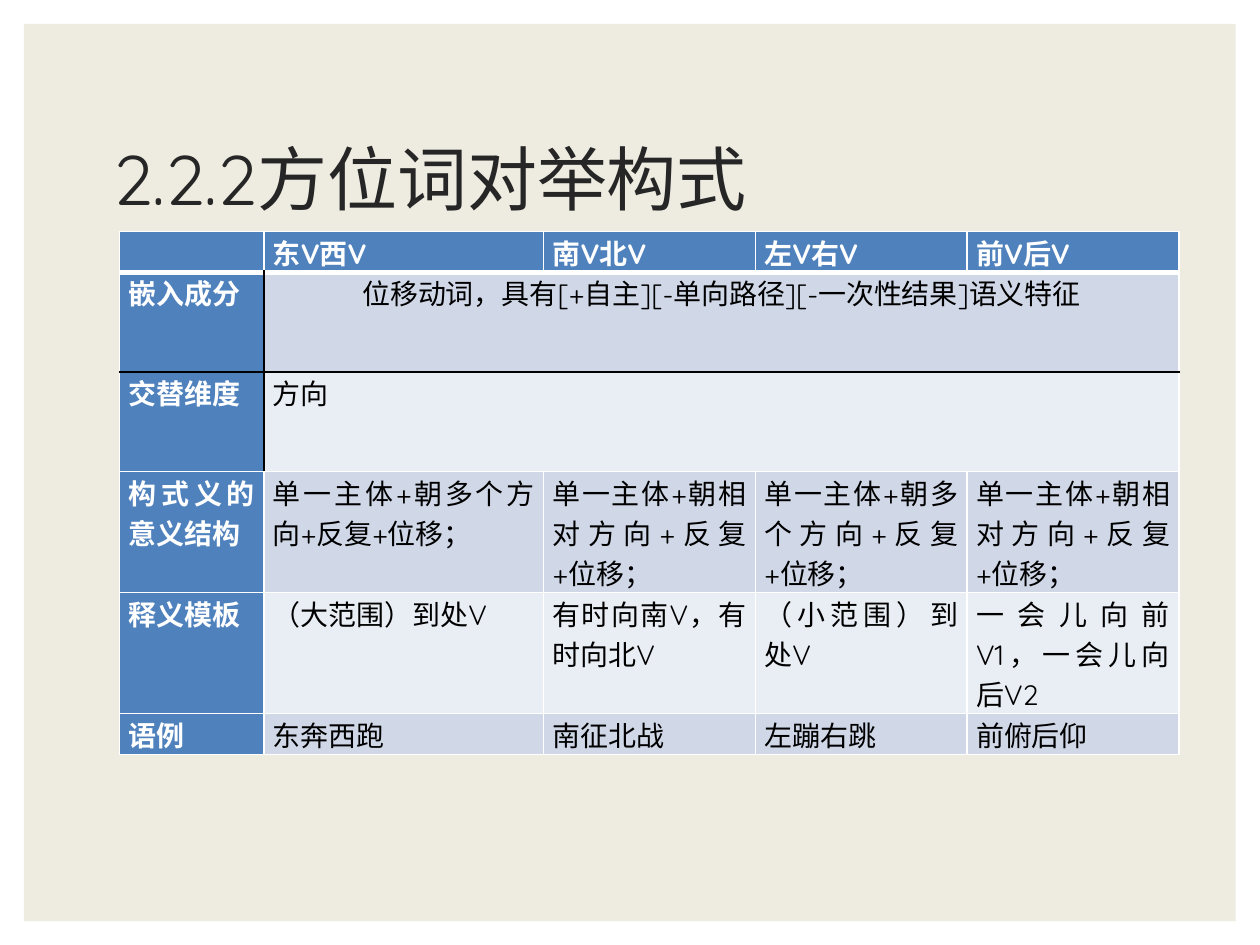
from lxml import etree
from pptx import Presentation
from pptx.dml.color import RGBColor
from pptx.enum.shapes import MSO_SHAPE
from pptx.enum.text import MSO_ANCHOR, PP_ALIGN
from pptx.oxml.ns import qn
from pptx.util import Cm, Pt

RECT = MSO_SHAPE.RECTANGLE
MIDDLE = MSO_ANCHOR.MIDDLE
LEFT, CENTER, JUST = PP_ALIGN.LEFT, PP_ALIGN.CENTER, PP_ALIGN.JUSTIFY

BLUE, DARK, PALE = "4F81BD", "D0D8E8", "E9EDF4"
WHITE, BLACK, BEIGE, GREY = "FFFFFF", "000000", "EEECE1", "262626"

WIDTHS = [2.91, 5.64, 4.27, 4.27, 4.27]
HEIGHTS = [0.82, 2.01, 2.01, 2.44, 2.44, 0.82]
ROWS = [
    ["", "东V西V", "南V北V", "左V右V", "前V后V"],
    ["嵌入成分", "位移动词，具有[+自主][-单向路径][-一次性结果]语义特征"],
    ["交替维度", "方向"],
    ["构式义的意义结构", "单一主体+朝多个方向+反复+位移；", "单一主体+朝相对方向+反复+位移；",
     "单一主体+朝多个方向+反复+位移；", "单一主体+朝相对方向+反复+位移；"],
    ["释义模板", "（大范围）到处V", "有时向南V，有时向北V", "（小范围）到处V", "一会儿向前V1，一会儿向后V2"],
    ["语例", "东奔西跑", "南征北战", "左蹦右跳", "前俯后仰"],
]
ALIGNS = {(1, 1): CENTER, (2, 1): LEFT}
FONTS = {(2, 0): "Calibri"}


def color(value):
    return RGBColor.from_string(value)


def edges(row, col):
    wide = row in (1, 2)
    black = {
        "L": wide and col == 1,
        "R": wide and col == 0,
        "T": row == 2,
        "B": row == 1,
    }
    return {
        side: (BLACK if dark else WHITE, 3 if row == 0 and side == "B" else 1)
        for side, dark in black.items()
    }


class Deck:
    font = "Quicksand"

    def __init__(self, slide):
        self.slide = slide

    def style(self, para, size, hue, bold=False, align=LEFT, font=None):
        para.alignment = align
        for run in para.runs:
            run.font.name = font or self.font
            run.font.size = Pt(size)
            run.font.bold = bold
            run.font.color.rgb = color(hue)

    def panel(self, left, top, width, height, hue):
        shape = self.slide.shapes.add_shape(RECT, Cm(left), Cm(top), Cm(width), Cm(height))
        shape.shadow.inherit = False
        shape.fill.solid()
        shape.fill.fore_color.rgb = color(hue)
        shape.line.fill.background()

    def title(self, left, top, width, height, text):
        box = self.slide.shapes.add_textbox(Cm(left), Cm(top), Cm(width), Cm(height))
        frame = box.text_frame
        frame.word_wrap = True
        frame.vertical_anchor = MIDDLE
        frame.text = text
        para = frame.paragraphs[0]
        para.line_spacing = 0.9
        self.style(para, 40, GREY)

    def border(self, cell, row, col):
        props = cell._tc.get_or_add_tcPr()
        for side, (hue, width) in edges(row, col).items():
            line = etree.SubElement(props, qn("a:ln" + side), w=str(Pt(width)))
            fill = etree.SubElement(line, qn("a:solidFill"))
            etree.SubElement(fill, qn("a:srgbClr"), val=hue)

    def cell(self, cell, row, col, text):
        head = row == 0 or col == 0
        self.border(cell, row, col)
        cell.fill.solid()
        cell.fill.fore_color.rgb = color(BLUE if head else DARK if row % 2 else PALE)
        cell.margin_left = cell.margin_right = Cm(0.18)
        cell.margin_top = cell.margin_bottom = 0
        cell.text_frame.text = text
        spot = (row, col)
        self.style(cell.text_frame.paragraphs[0], 16, WHITE if head else BLACK,
                   head, ALIGNS.get(spot, JUST), FONTS.get(spot))

    def table(self, left, top, widths, heights, rows):
        frame = self.slide.shapes.add_table(
            len(heights), len(widths), Cm(left), Cm(top), Cm(sum(widths)), Cm(sum(heights)))
        table = frame.table
        for column, width in zip(table.columns, widths):
            column.width = Cm(width)
        for row, (height, texts) in enumerate(zip(heights, rows)):
            table.rows[row].height = Cm(height)
            last = len(widths) - 1
            if len(texts) <= last:
                table.cell(row, len(texts) - 1).merge(table.cell(row, last))
            for col in range(len(widths)):
                text = texts[col] if col < len(texts) else ""
                self.cell(table.cell(row, col), row, col, text)


def main():
    show = Presentation()
    show.slide_width, show.slide_height = Cm(25.4), Cm(19.05)
    deck = Deck(show.slides.add_slide(show.slide_layouts[6]))
    deck.panel(0.48, 0.48, 24.43, 18.09, BEIGE)
    deck.title(2.03, 1.78, 21.34, 3.81, "2.2.2方位词对举构式")
    deck.table(2.41, 4.67, WIDTHS, HEIGHTS, ROWS)
    show.save("out.pptx")


if __name__ == "__main__":
    main()
